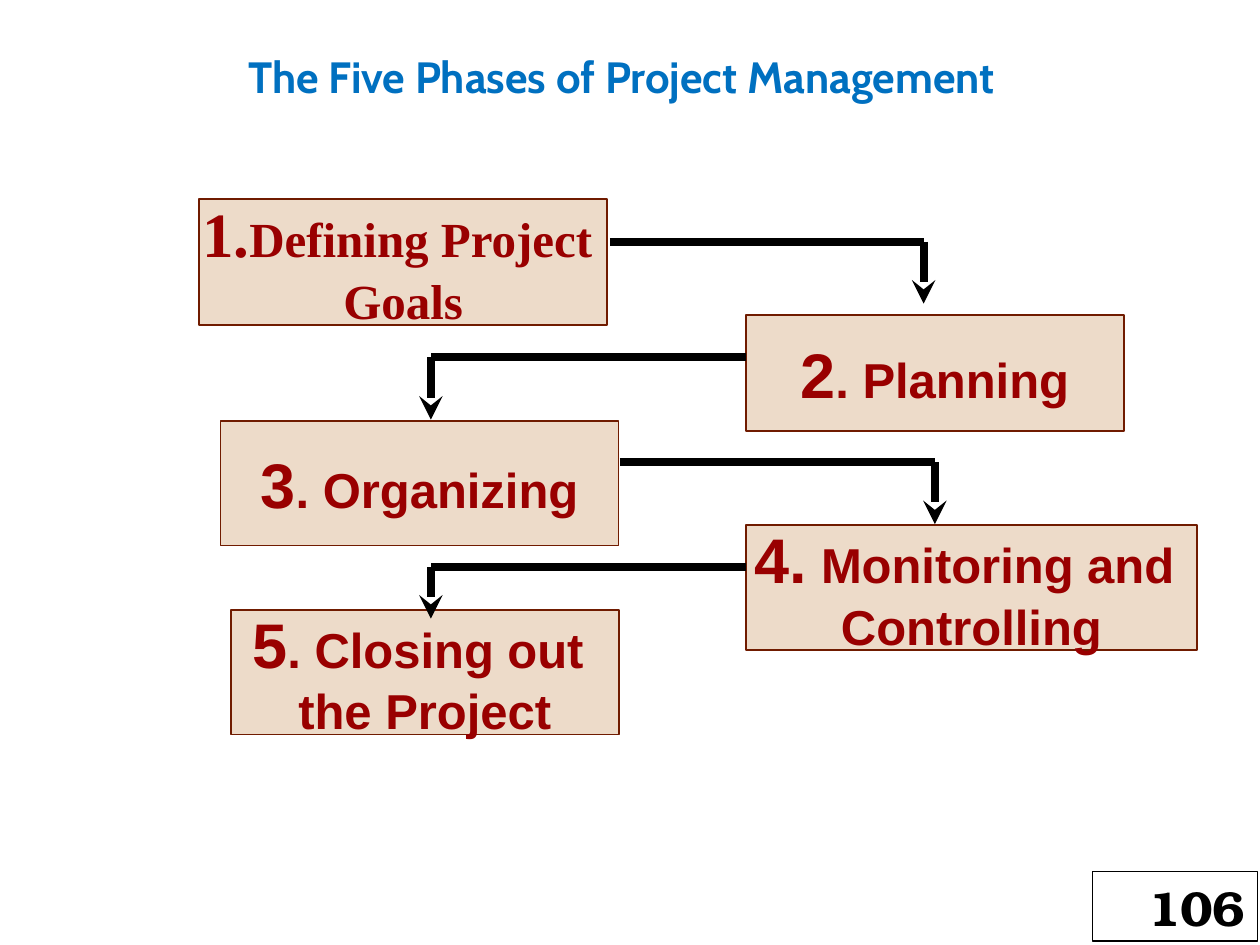
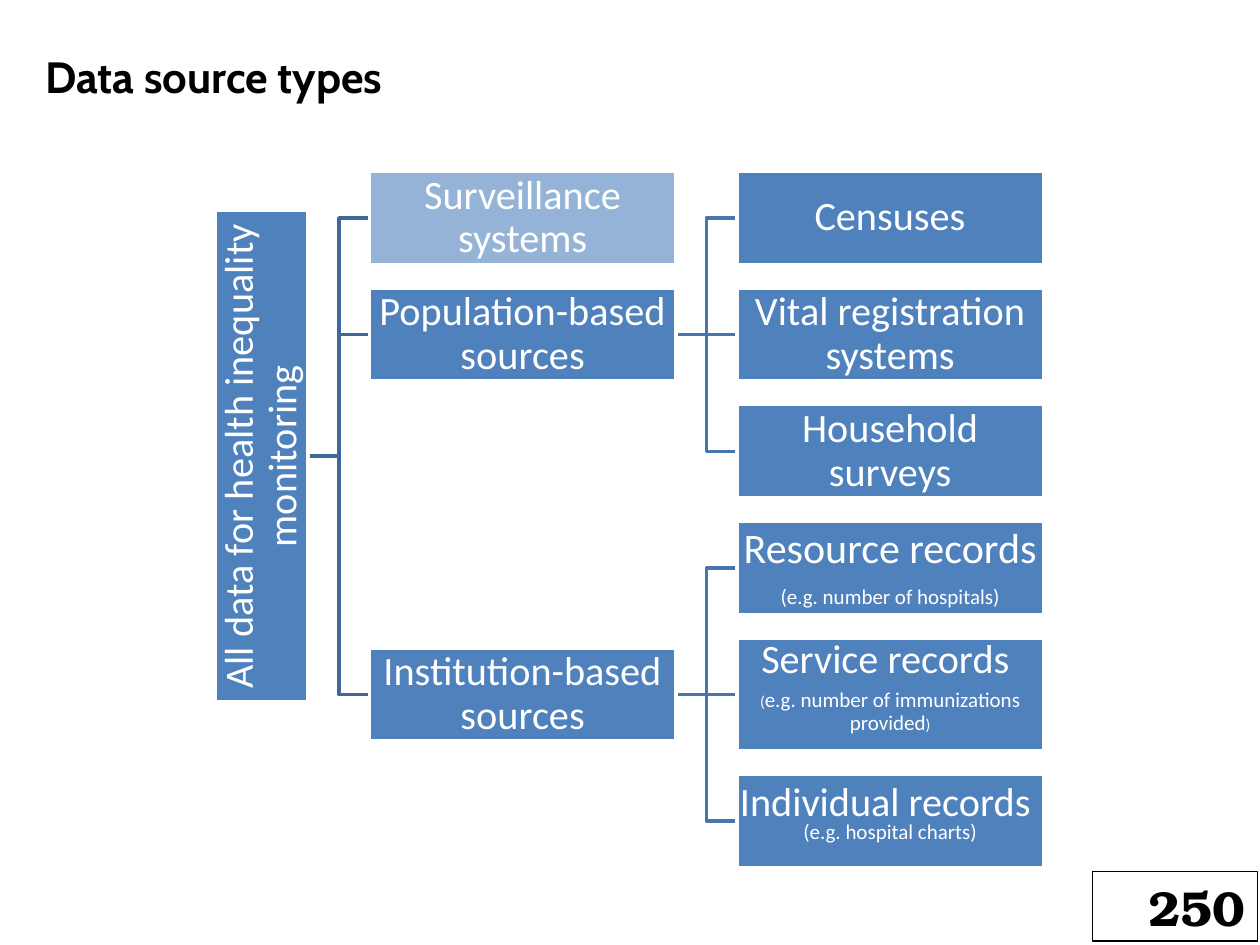
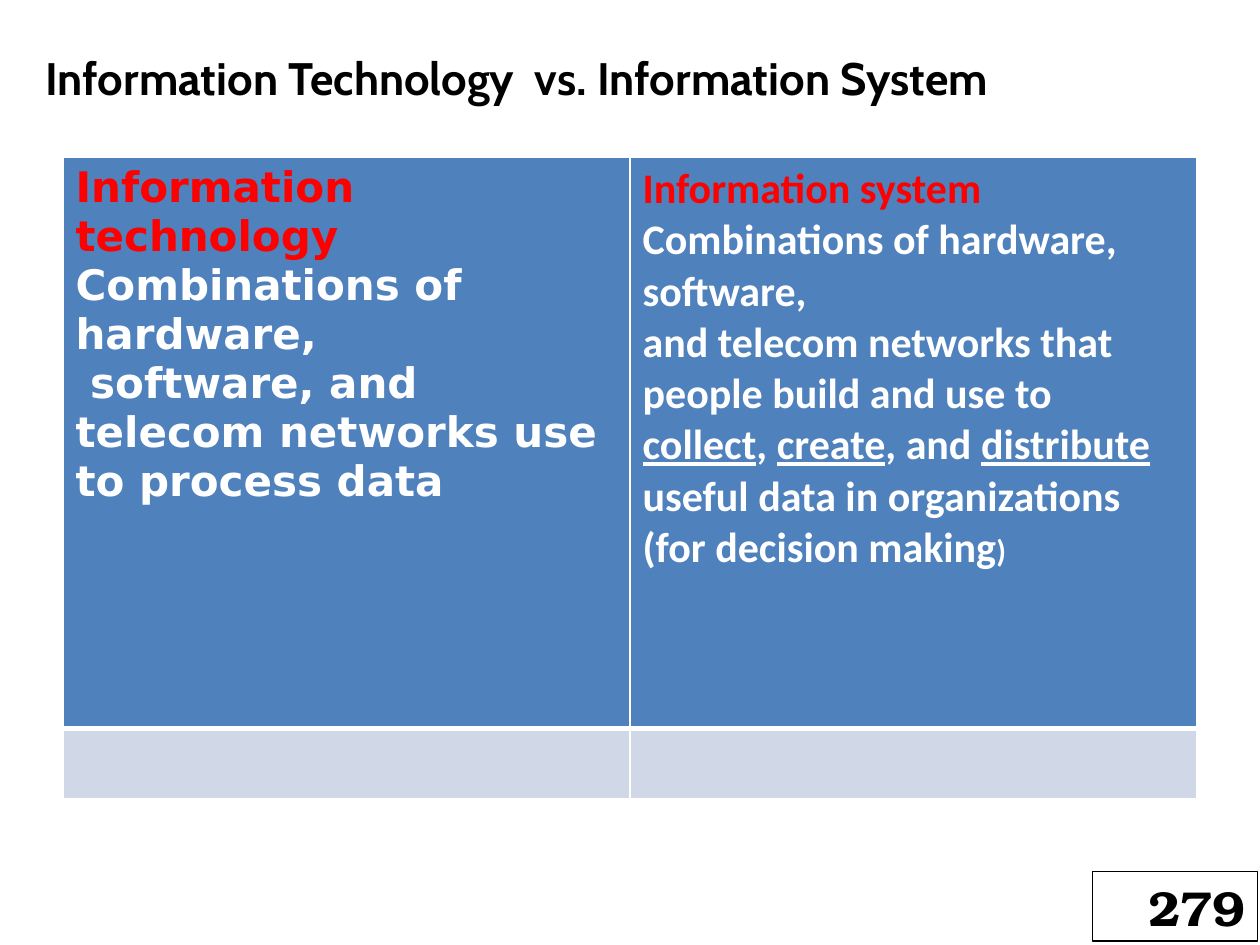
from lxml import etree
from pptx import Presentation
from pptx.dml.color import RGBColor
from pptx.enum.shapes import MSO_CONNECTOR, MSO_SHAPE
from pptx.enum.text import MSO_ANCHOR, MSO_AUTO_SIZE, PP_ALIGN
from pptx.oxml.ns import qn
from pptx.util import Pt

RECT, STRAIGHT = MSO_SHAPE.RECTANGLE, MSO_CONNECTOR.STRAIGHT
TOP, MIDDLE, NO_FIT = MSO_ANCHOR.TOP, MSO_ANCHOR.MIDDLE, MSO_AUTO_SIZE.NONE
LEFT, CENTER, RIGHT, JUSTIFY = PP_ALIGN.LEFT, PP_ALIGN.CENTER, PP_ALIGN.RIGHT, PP_ALIGN.JUSTIFY

COLORS = {
    "black": "000000", "white": "FFFFFF", "title_blue": "0070C0",
    "phase_fill": "EDDBC9", "phase_line": "701B00", "phase_text": "990000",
    "node": "4F81BD", "node_light": "95B3D7",
    "branch_1": "3F6797", "branch_2": "4875AC",
    "red": "FF0000", "row_pale": "D0D8E8",
}
RGB = {name: RGBColor.from_string(value) for name, value in COLORS.items()}


def write(tf, paragraphs, font, layout):
    """Fill a frame; each paragraph is (runs, layout changes), each run (text, font changes)."""
    for i, (runs, changes) in enumerate(paragraphs):
        p = tf.paragraphs[0] if i == 0 else tf.add_paragraph()
        for key, value in {**layout, **changes}.items():
            setattr(p, key, value)
        for text, run_changes in runs:
            r = p.add_run()
            r.text = text
            values = {**font, **run_changes}
            r.font.color.rgb = RGB[values.pop("color")]
            for key, value in values.items():
                setattr(r.font, key, value)


def connect(s, x1, y1, x2, y2, color, width, arrow=False):
    """Draw a straight line, with an arrowhead at its end if asked."""
    c = s.shapes.add_connector(STRAIGHT, Pt(x1), Pt(y1), Pt(x2), Pt(y2))
    c.line.color.rgb = RGB[color]
    c.line.width = Pt(width)
    sp_pr = c._element.spPr
    etree.SubElement(sp_pr, qn("a:effectLst"))
    if arrow:
        etree.SubElement(sp_pr.find(qn("a:ln")), qn("a:tailEnd"), type="stealth")


prs = Presentation()
prs.slide_width, prs.slide_height = Pt(720), Pt(540)

# Title and page number on every slide
HEADINGS = [
    ("The Five Phases of Project Management ", "title_blue", 25, CENTER, "106"),
    ("Data source types", "black", 25, JUSTIFY, "250"),
    ("Information Technology  vs. Information System", "black", 26, JUSTIFY, "279"),
]
slides = []
for title, color, size, align, number in HEADINGS:
    s = prs.slides.add_slide(prs.slide_layouts[5])
    slides.append(s)
    sp = s.shapes.title
    sp.left, sp.top, sp.width, sp.height = Pt(18.7), Pt(18.7), Pt(678.2), Pt(507.6)
    tf = sp.text_frame
    tf.auto_size, tf.vertical_anchor = NO_FIT, TOP
    write(tf, [([(title, {})], {})],
          {"name": "Cabin", "size": Pt(size), "bold": True, "color": color},
          {"alignment": align, "line_spacing": 1.2})

    sp = s.shapes.add_shape(RECT, Pt(624.2), Pt(498.2), Pt(94.3), Pt(39.6))
    sp.shadow.inherit = False
    sp.fill.background()
    sp.line.color.rgb, sp.line.width = RGB["black"], Pt(0.75)
    sp.text_frame.vertical_anchor = MIDDLE
    write(sp.text_frame, [([(number, {})], {})],
          {"name": "TeX Gyre Bonum", "size": Pt(28), "bold": True, "color": "black"},
          {"alignment": RIGHT})

# Slide 1: phase boxes (left, top, width, height, font, number, lines, hanging indent)
s = slides[0]
PHASES = [
    (113.8, 113.8, 233.3, 72, "Times New Roman", "1.", ["Defining Project ", "Goals"], 27),
    (426.2, 180, 216, 66.2, "Arial", "2", [". Planning"], 0),
    (126, 240.5, 227.5, 71.3, "Arial", "3", [". Organizing"], 0),
    (426.2, 300.2, 257.8, 71.3, "Arial", "4.", [" Monitoring and ", "Controlling"], 0),
    (131.8, 348.5, 221.8, 71.3, "Arial", "5", [". Closing out ", "the Project"], 0),
]
for x, y, w, h, face, number, lines, indent in PHASES:
    sp = s.shapes.add_shape(RECT, Pt(x), Pt(y), Pt(w), Pt(h))
    sp.shadow.inherit = False
    sp.fill.solid()
    sp.fill.fore_color.rgb = RGB["phase_fill"]
    sp.line.color.rgb, sp.line.width = RGB["phase_line"], Pt(1)
    tf = sp.text_frame
    tf.word_wrap, tf.vertical_anchor = False, MIDDLE
    paragraphs = [([(line, {})], {}) for line in lines]
    paragraphs[0][0].insert(0, (number, {"size": Pt(36)}))
    write(tf, paragraphs,
          {"name": face, "size": Pt(28), "bold": True, "color": "phase_text"},
          {"alignment": CENTER})
    if indent:
        for p in tf.paragraphs:
            p_pr = p._p.get_or_add_pPr()
            p_pr.set("marL", str(Pt(indent)))
            p_pr.set("indent", str(-Pt(indent)))

# Arrows between phases: across from the box, then down to the next
ARROWS = [
    (348.5, 527.8, 138.2, 173.5),
    (426.2, 246.2, 203.8, 239.8),
    (354.2, 534.2, 264.2, 299.5),
    (426.2, 246.2, 324, 353.5),
]
for x1, x2, y1, y2 in ARROWS:
    connect(s, x1, y1, x2, y1, "black", 4.5)
    connect(s, x2, y1, x2, y2, "black", 4.5, arrow=True)

# Slide 2: tree of data sources
s = slides[1]
NODE_W, NODE_H, GAP_X, GAP_Y = 175, 53.3, 35, 13.4
MID_X = 211.2
LEAF_X = MID_X + NODE_W + GAP_X
ROOT_X, ROOT_LENGTH = MID_X - GAP_X - NODE_H, 280.8
TIGHT = {"line_spacing": 0.5}
SMALL, TINY = {"size": Pt(12)}, {"size": Pt(9)}
LEAVES = [
    (NODE_H, [([("Censuses", {})], {})]),
    (NODE_H, [([("Vital registration systems", {})], {})]),
    (NODE_H, [([("Household surveys", {})], {})]),
    (NODE_H, [([("Resource records ", {"size": Pt(24)})], {"space_after": Pt(8)}),
              ([("(e.g. number of hospitals)", SMALL)], {})]),
    (64.4, [([("Service records ", {})], {**TIGHT, "space_after": Pt(6)}),
            ([("(", TINY), ("e.g. number of immunizations provided", SMALL), (")", TINY)], {})]),
    (NODE_H, [([("Individual records ", {})], TIGHT),
              ([("(e.g. hospital charts)", SMALL)], {})]),
]

# Node centres: leaves stack evenly, each parent sits midway between its children
nodes, leaf_y, y = [], [], 97.9
for h, paragraphs in LEAVES:
    leaf_y.append(y + h / 2)
    nodes.append((LEAF_X + NODE_W / 2, y + h / 2, NODE_W, h, 0, "node", paragraphs))
    y += h + GAP_Y
mid_y = [leaf_y[0], leaf_y[1], leaf_y[4]]
root_y = (mid_y[0] + mid_y[2]) / 2
MID_NODES = [("Surveillance systems", "node_light"), ("Population-based sources", "node"),
             ("Institution-based sources", "node")]
for (text, color), y in zip(MID_NODES, mid_y):
    nodes.append((MID_X + NODE_W / 2, y, NODE_W, NODE_H, 0, color, [([(text, {})], {})]))
nodes.append((ROOT_X + NODE_H / 2, root_y, ROOT_LENGTH, NODE_H, 270, "node",
              [([("All data for health inequality monitoring", {})], {})]))

# Branches bend halfway across the gap
BRANCHES = [
    (MID_X - GAP_X, root_y, mid_y, "branch_1"),
    (LEAF_X - GAP_X, mid_y[1], leaf_y[:3], "branch_2"),
    (LEAF_X - GAP_X, mid_y[2], leaf_y[3:], "branch_2"),
]
for x, y, child_ys, color in BRANCHES:
    bend, end = x + GAP_X / 2, x + GAP_X
    for child_y in child_ys:
        if child_y == y:
            connect(s, x, y, end, y, color, 2)
            continue
        outline = s.shapes.build_freeform(Pt(x), Pt(y))
        corners = [(bend, y), (bend, child_y), (end, child_y)]
        outline.add_line_segments([(Pt(a), Pt(b)) for a, b in corners], close=False)
        sp = outline.convert_to_shape()
        sp.shadow.inherit = False
        sp.fill.background()
        sp.line.color.rgb, sp.line.width = RGB[color], Pt(2)

for cx, cy, w, h, rotation, color, paragraphs in nodes:
    sp = s.shapes.add_shape(RECT, Pt(cx - w / 2), Pt(cy - h / 2), Pt(w), Pt(h))
    sp.rotation = rotation
    sp.shadow.inherit = False
    sp.fill.solid()
    sp.fill.fore_color.rgb = RGB[color]
    sp.line.color.rgb, sp.line.width = RGB["white"], Pt(2)
    tf = sp.text_frame
    tf.word_wrap, tf.vertical_anchor = True, MIDDLE
    for side in ("left", "top", "right", "bottom"):
        setattr(tf, f"margin_{side}", Pt(1.4))
    write(tf, paragraphs, {"name": "Calibri", "size": Pt(23), "color": "white"},
          {"alignment": CENTER, "line_spacing": 0.9})

# Slide 3: comparison table
s = slides[2]
ROW_HEIGHTS, ROW_FILLS = (326.2, 40.3), ("node", "row_pale")
BORDERS = [{"L": 1, "R": 1, "T": 1, "B": 3}, {"L": 1, "R": 1, "T": 3, "B": 1}]
RED, UNDERLINE = {"color": "red"}, {"underline": True}
COLUMNS = [
    ("DejaVu Sans", [
        ([("Information technology", RED)], {}),
        ([("Combinations of hardware,", {})], {}),
        ([(" software, and telecom networks use to process data", {})], {}),
    ]),
    ("Calibri", [
        ([("Information system", RED)], {}),
        ([("Combinations of hardware, software,", {})], {}),
        ([("and telecom networks that people build and use to ", {}),
          ("collect", UNDERLINE), (", ", {}), ("create", UNDERLINE), (", and ", {}),
          ("distribute", UNDERLINE),
          (" useful data in organizations (for decision making", {}),
          (")", {"size": Pt(18)})], {}),
    ]),
]
table = s.shapes.add_table(2, 2, Pt(36), Pt(90), Pt(648), Pt(sum(ROW_HEIGHTS))).table
for i, height in enumerate(ROW_HEIGHTS):
    table.rows[i].height = Pt(height)
    for cell in table.rows[i].cells:
        tc_pr = cell._tc.get_or_add_tcPr()
        for side, width in BORDERS[i].items():
            ln = etree.SubElement(tc_pr, qn(f"a:ln{side}"), w=str(Pt(width)))
            fill = etree.SubElement(ln, qn("a:solidFill"))
            etree.SubElement(fill, qn("a:srgbClr"), val=COLORS["white"])
        cell.fill.solid()
        cell.fill.fore_color.rgb = RGB[ROW_FILLS[i]]
for j, (face, paragraphs) in enumerate(COLUMNS):
    write(table.cell(0, j).text_frame, paragraphs,
          {"name": face, "size": Pt(24), "bold": True, "color": "white"},
          {"alignment": LEFT})

prs.save("out.pptx")
